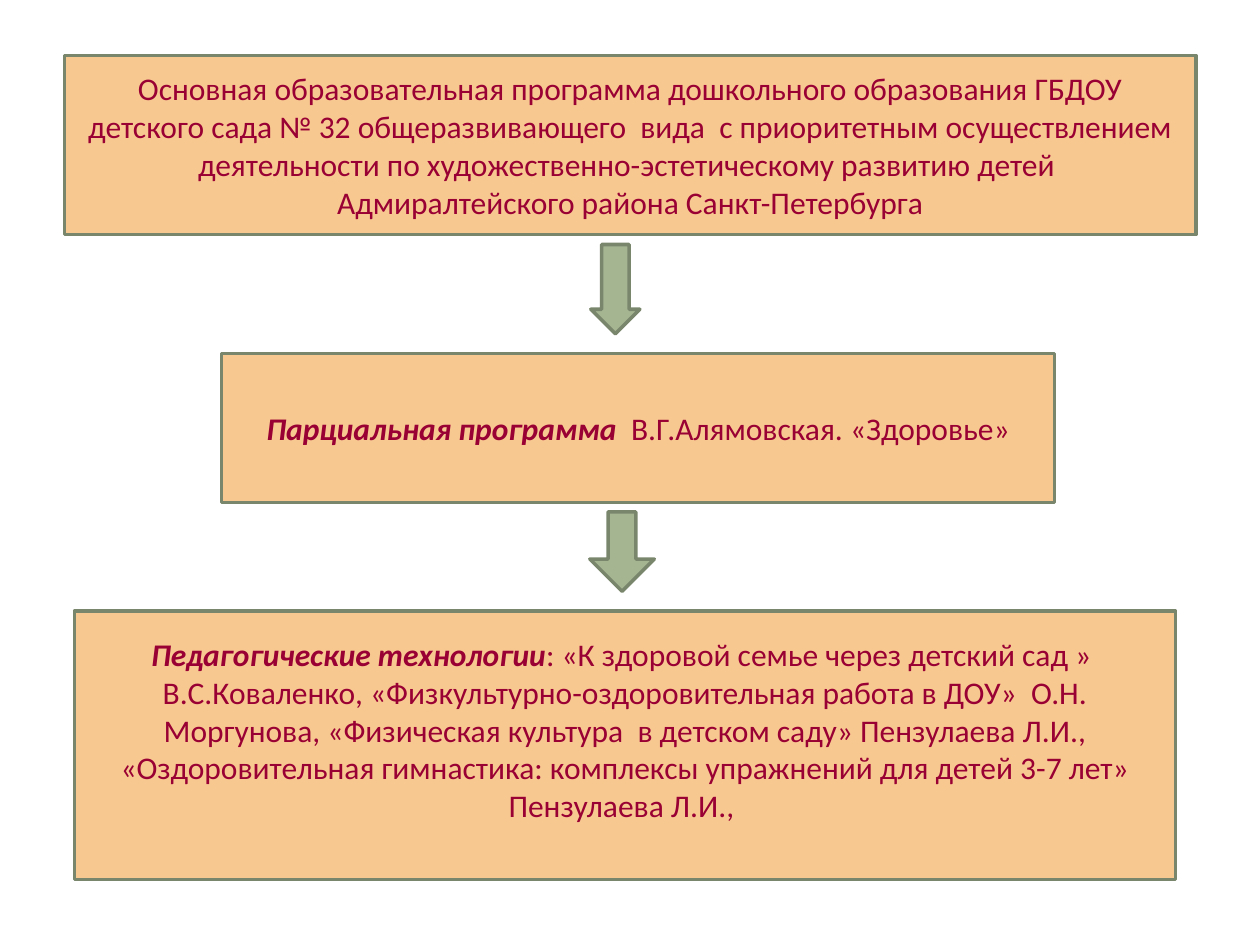
from pptx import Presentation
from pptx.dml.color import RGBColor
from pptx.enum.shapes import MSO_SHAPE as Shape
from pptx.enum.text import MSO_ANCHOR as Anchor, PP_ALIGN as Align
from pptx.util import Cm, Pt

PEACH, GREEN, OUTLINE, CRIMSON = "F8C891", "A5B592", "7A866C", "990033"
PLAIN = {"name": "Calibri", "size": Pt(18), "bold": False, "italic": False}
STRONG = {**PLAIN, "bold": True, "italic": True}

# Preset, (left, top, width, height) in cm, bottom inset in cm, paragraphs of (text, format)
BOXES = [
    (Shape.FLOWCHART_PROCESS, (1.3, 1.12, 22.81, 3.61), 0.13, [
        [("Основная образовательная программа дошкольного образования ГБДОУ "
          "детского сада № 32 общеразвивающего  вида  с приоритетным осуществлением "
          "деятельности по художественно-эстетическому развитию детей ", PLAIN)],
        [("Адмиралтейского района Санкт-Петербурга", PLAIN)],
    ]),
    (Shape.RECTANGLE, (4.47, 7.13, 16.79, 3.0), 0.13, [
        [("Парциальная программа  ", STRONG), ("В.Г.Алямовская. «Здоровье»", PLAIN)],
    ]),
    (Shape.RECTANGLE, (1.5, 12.32, 22.2, 5.41), 0.76, [
        [("Педагогические технологии", STRONG),
         (": «К здоровой семье через детский сад »  В.С.Коваленко, "
          "«Физкультурно-оздоровительная работа в ДОУ»  О.Н. Моргунова, "
          "«Физическая культура  в детском саду» Пензулаева Л.И., "
          "«Оздоровительная гимнастика: комплексы упражнений для детей 3-7 лет» "
          "Пензулаева Л.И., ", PLAIN)],
    ]),
]
# (left, top, width, height) in cm, shaft width as a share of the arrow width
ARROWS = [
    ((11.91, 4.93, 0.99, 1.8), 0.56),
    ((11.89, 10.32, 1.3, 1.6), 0.43),
]


def rgb(code):
    return RGBColor.from_string(code)


def add_figure(slide, preset, place, fill):
    figure = slide.shapes.add_shape(preset, *map(Cm, place))
    figure.shadow.inherit = False
    figure.fill.solid()
    figure.fill.fore_color.rgb = rgb(fill)
    figure.line.color.rgb = rgb(OUTLINE)
    figure.line.width = Pt(2)
    return figure


def write(frame, paragraphs):
    for index, spans in enumerate(paragraphs):
        para = frame.add_paragraph() if index else frame.paragraphs[0]
        para.alignment = Align.CENTER
        for text, style in spans:
            span = para.add_run()
            span.text = text
            span.font.color.rgb = rgb(CRIMSON)
            for name, value in style.items():
                setattr(span.font, name, value)


def main():
    deck = Presentation()
    deck.slide_width, deck.slide_height = Cm(25.4), Cm(19.05)
    slide = deck.slides.add_slide(deck.slide_layouts[6])

    for preset, place, inset, paragraphs in BOXES:
        frame = add_figure(slide, preset, place, PEACH).text_frame
        frame.word_wrap = True
        frame.vertical_anchor = Anchor.MIDDLE
        frame.margin_bottom = Cm(inset)
        write(frame, paragraphs)

    for place, shaft in ARROWS:
        arrow = add_figure(slide, Shape.DOWN_ARROW, place, GREEN)
        arrow.adjustments[0] = shaft

    deck.save("out.pptx")


if __name__ == "__main__":
    main()
